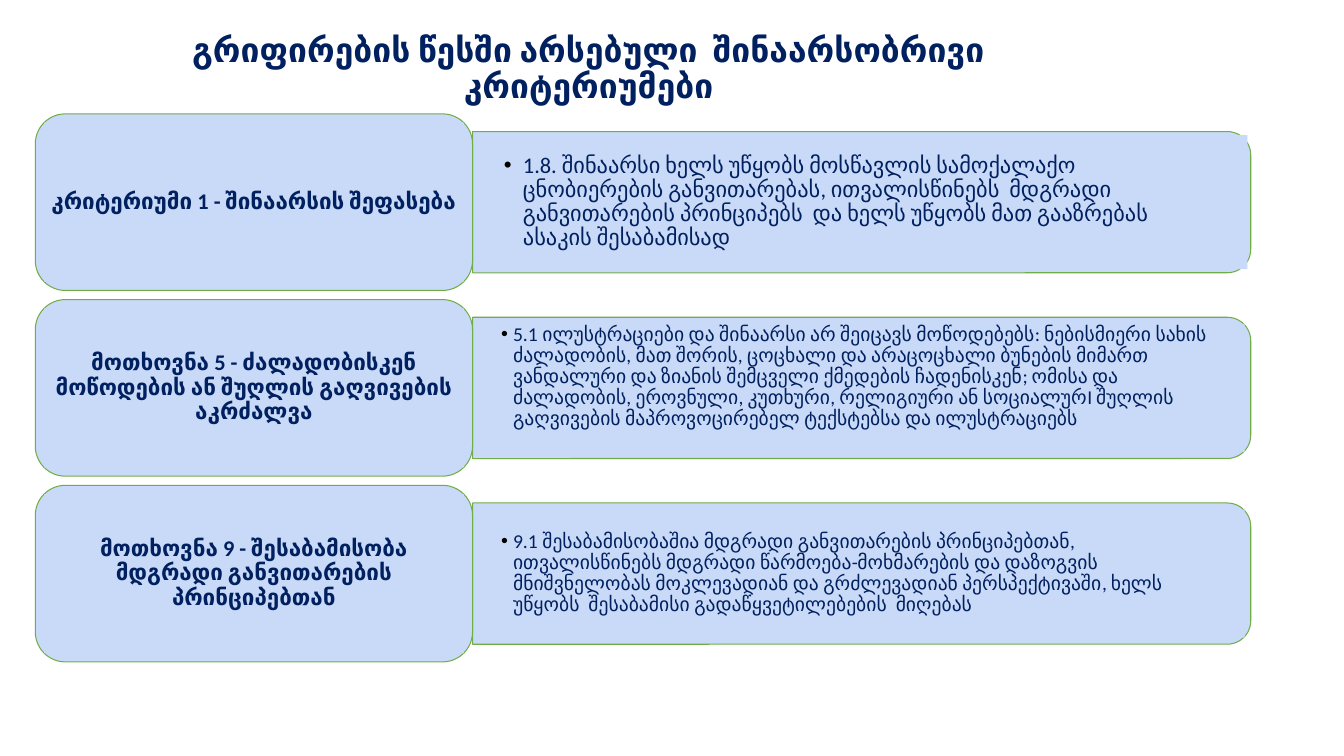
from lxml.etree import SubElement
from pptx import Presentation
from pptx.dml.color import RGBColor
from pptx.enum.shapes import MSO_SHAPE
from pptx.enum.text import MSO_ANCHOR, PP_ALIGN
from pptx.oxml.ns import qn
from pptx.util import Cm, Pt

NAVY = RGBColor(0x00, 0x20, 0x60)
PALE_BLUE = RGBColor(0xC9, 0xDA, 0xF8)
GREEN = RGBColor(0x70, 0xAD, 0x47)

ROW_TOP, ROW_PITCH, ROW_HEIGHT = 2.87, 4.68, 4.45
LABEL_LEFT, LABEL_WIDTH, LABEL_INSET = 0.89, 11.02, 0.22
PANEL_LEFT, PANEL_WIDTH, PANEL_HEIGHT = 11.91, 19.61, 3.56
DETAIL_WIDTH = 19.43

TITLE = "გრიფირების წესში არსებული  შინაარსობრივი კრიტერიუმები"
CRITERIA = [
    {
        "label": "კრიტერიუმი 1 - შინაარსის შეფასება",
        "detail": "1.8. შინაარსი ხელს უწყობს მოსწავლის სამოქალაქო ცნობიერების "
                  "განვითარებას, ითვალისწინებს  მდგრადი განვითარების პრინციპებს  "
                  "და ხელს უწყობს მათ გააზრებას ასაკის შესაბამისად",
        "size": 16, "left": 12.01, "height": 3.38, "indent": 0.48, "bottom": 0.36,
    },
    {
        "label": "მოთხოვნა 5 - ძალადობისკენ მოწოდების ან შუღლის გაღვივების აკრძალვა",
        "detail": "5.1 ილუსტრაციები და შინაარსი არ შეიცავს მოწოდებებს: ნებისმიერი "
                  "სახის ძალადობის, მათ შორის, ცოცხალი და არაცოცხალი ბუნების მიმართ "
                  "ვანდალური და ზიანის შემცველი ქმედების ჩადენისკენ; ომისა და "
                  "ძალადობის, ეროვნული, კუთხური, რელიგიური ან სოციალურI შუღლის "
                  "გაღვივების მაპროვოცირებელ ტექსტებსა და ილუსტრაციებს",
        "size": 14, "left": 11.94, "height": 3.23, "indent": 0.3, "bottom": 0.9,
    },
    {
        "label": "მოთხოვნა 9 - შესაბამისობა მდგრადი განვითარების პრინციპებთან",
        "detail": "9.1 შესაბამისობაშია მდგრადი განვითარების პრინციპებთან, "
                  "ითვალისწინებს მდგრადი წარმოება-მოხმარების და დაზოგვის "
                  "მნიშვნელობას მოკლევადიან და გრძლევადიან პერსპექტივაში, ხელს "
                  "უწყობს  შესაბამისი გადაწყვეტილებების  მიღებას",
        "size": 14, "left": 11.94, "height": 3.23, "indent": 0.3, "bottom": 0.36,
    },
]


def apply(target, values):
    """Set each attribute of target from a dict of format values."""
    for name, value in values.items():
        setattr(target, name, value)


class CriteriaSlide:
    """Hold the slide and its style, and draw each kind of element."""

    font = {"name": "Calibri"}

    def __init__(self, deck):
        """Add a blank slide to the deck."""
        self.shapes = deck.slides.add_slide(deck.slide_layouts[6]).shapes

    def put_text(self, holder, text, size, bold, align, anchor, insets):
        """Put one styled paragraph in a shape and return it."""
        sides = ("margin_left", "margin_top", "margin_right", "margin_bottom")
        frame = holder.text_frame
        apply(frame, {"word_wrap": True, "vertical_anchor": anchor})
        apply(frame, {side: Cm(inset) for side, inset in zip(sides, insets)})
        paragraph = frame.paragraphs[0]
        apply(paragraph, {"alignment": align, "line_spacing": 0.9})
        run = paragraph.add_run()
        run.text = text
        apply(run.font, {**self.font, "size": Pt(size), "bold": bold})
        run.font.color.rgb = NAVY
        return paragraph

    def title(self, text):
        """Draw the slide heading."""
        heading = self.shapes.add_textbox(Cm(2.01), Cm(0.71), Cm(25.65), Cm(3.56))
        self.put_text(heading, text, 24, True, PP_ALIGN.CENTER, MSO_ANCHOR.TOP,
                      (0.25, 0.13, 0.25, 0.13))

    def block(self, kind, left, top, width, height, outlined=False):
        """Draw a pale block, with a green outline if asked."""
        block = self.shapes.add_shape(kind, Cm(left), Cm(top), Cm(width), Cm(height))
        block.shadow.inherit = False
        block.fill.solid()
        block.fill.fore_color.rgb = PALE_BLUE
        if outlined:
            block.line.color.rgb = GREEN
            block.line.width = Pt(0.75)
        else:
            block.line.fill.background()
        return block

    def panel(self, middle):
        """Draw the detail panel, rounded on its right side."""
        center = PANEL_LEFT + PANEL_WIDTH / 2
        panel = self.block(MSO_SHAPE.ROUND_2_SAME_RECTANGLE,
                           center - PANEL_HEIGHT / 2, middle - PANEL_WIDTH / 2,
                           PANEL_HEIGHT, PANEL_WIDTH, outlined=True)
        panel.rotation = 90

    def detail(self, criterion, middle):
        """Draw the bulleted detail text over its panel."""
        height = criterion["height"]
        detail = self.block(MSO_SHAPE.RECTANGLE, criterion["left"],
                            middle - height / 2, DETAIL_WIDTH, height)
        paragraph = self.put_text(detail, criterion["detail"], criterion["size"], False,
                                  PP_ALIGN.LEFT, MSO_ANCHOR.MIDDLE,
                                  (0.69, 0.36, 0.69, criterion["bottom"]))
        properties = paragraph._p.get_or_add_pPr()
        indent = Cm(criterion["indent"])
        properties.set("marL", str(indent))
        properties.set("indent", str(-indent))
        bullet_color = SubElement(properties, qn("a:buClr"))
        SubElement(bullet_color, qn("a:srgbClr"), val="000000")
        SubElement(properties, qn("a:buFont"), typeface="Arial")
        SubElement(properties, qn("a:buChar"), char="•")

    def label(self, text, top):
        """Draw the rounded label and its text."""
        rounded = self.block(MSO_SHAPE.ROUNDED_RECTANGLE, LABEL_LEFT, top,
                             LABEL_WIDTH, ROW_HEIGHT, outlined=True)
        rounded.adjustments[0] = 0.17
        caption = self.block(MSO_SHAPE.RECTANGLE, LABEL_LEFT + LABEL_INSET,
                             top + LABEL_INSET, LABEL_WIDTH - 2 * LABEL_INSET,
                             ROW_HEIGHT - 2 * LABEL_INSET)
        self.put_text(caption, text, 16, True, PP_ALIGN.CENTER, MSO_ANCHOR.MIDDLE,
                      (0.17, 0.08, 0.17, 0.08))

    def row(self, criterion, top):
        """Draw one criterion with its label and detail."""
        middle = top + ROW_HEIGHT / 2
        self.panel(middle)
        self.detail(criterion, middle)
        self.label(criterion["label"], top)


def main():
    """Build and save the deck."""
    deck = Presentation()
    apply(deck, {"slide_width": Cm(33.87), "slide_height": Cm(19.05)})
    slide = CriteriaSlide(deck)
    slide.title(TITLE)
    for index, criterion in enumerate(CRITERIA):
        slide.row(criterion, ROW_TOP + index * ROW_PITCH)
    deck.save("out.pptx")


if __name__ == "__main__":
    main()
